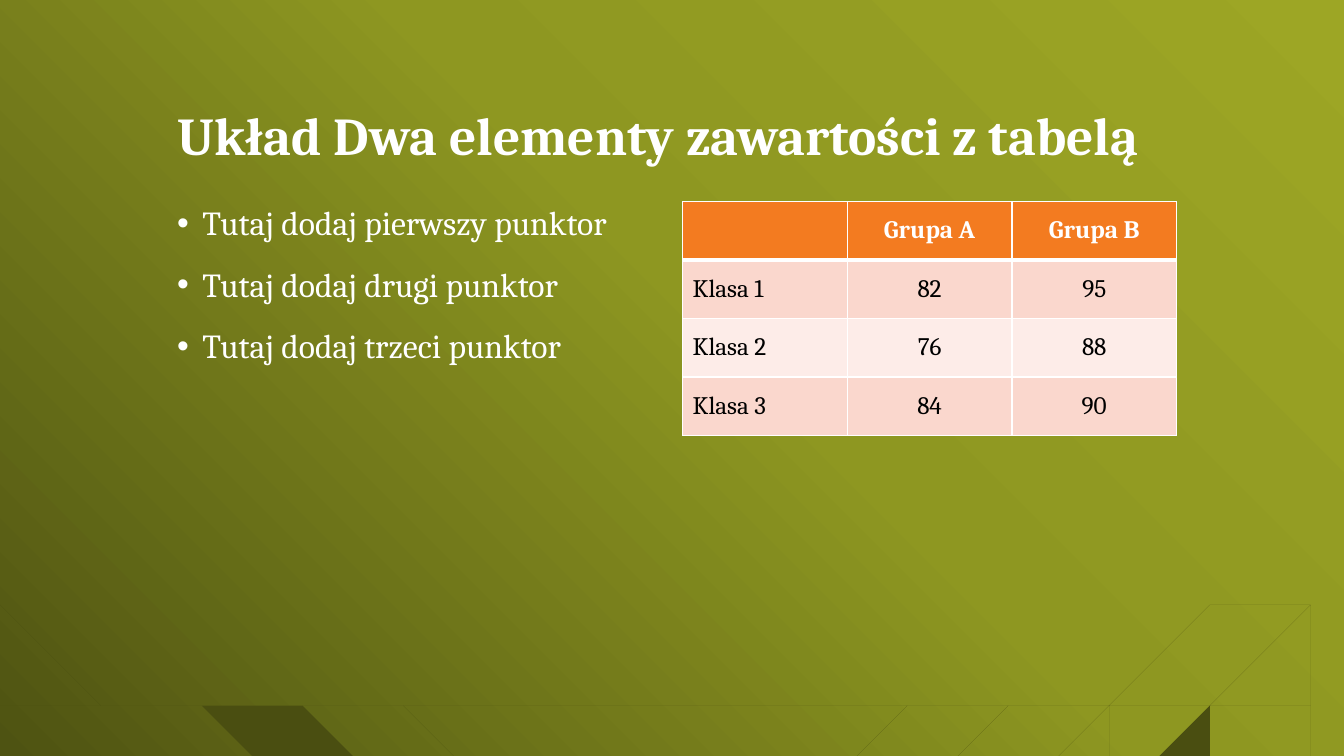
from copy import deepcopy
from lxml.etree import SubElement
from pptx import Presentation
from pptx.dml.color import RGBColor
from pptx.enum.text import MSO_ANCHOR, PP_ALIGN
from pptx.oxml import parse_xml
from pptx.oxml.ns import nsdecls, qn
from pptx.util import Inches, Pt

TITLE = "Układ Dwa elementy zawartości z tabelą"
POINTS = ["Tutaj dodaj pierwszy punktor", "Tutaj dodaj drugi punktor",
          "Tutaj dodaj trzeci punktor"]
ROWS = [["", "Grupa A", "Grupa B"],
        ["Klasa 1", "82", "95"],
        ["Klasa 2", "76", "88"],
        ["Klasa 3", "84", "90"]]

WHITE = RGBColor(0xFF, 0xFF, 0xFF)
BLACK = RGBColor(0, 0, 0)
OLIVE = RGBColor(0x4A, 0x4E, 0x11)
ORANGE = RGBColor(0xF3, 0x7B, 0x20)
BANDS = [RGBColor(0xFD, 0xEC, 0xE8), RGBColor(0xFA, 0xD7, 0xCD)]
GLOW = [(0, RGBColor(0x9D, 0xA6, 0x25)), (0.45, RGBColor(0x8E, 0x97, 0x21)),
        (1, RGBColor(0x4E, 0x53, 0x12))]
FONT = "Cambria"

WIDE, HIGH = 13.33, 7.5
LEFT, TOP, COL, GAP = 1.66, 2, 4.9, 0.21
CELL_W, CELL_H = COL / 3, 0.58

# Strands of the wave: start, two control points, end,
# then the shift of the lower edge at the start and at the end.
LONG = [
    ((2.4, 7.11), (6, 7.6), (9.8, 7.08), (WIDE, 6.04), (0.36, 0.05), (0, 0.01)),
    ((2.76, 7.16), (6.31, 7.65), (9.99, 7.13), (WIDE, 6.17), (-0.18, -0.02), (0, 0.01)),
    ((2.58, 7.14), (6.18, 7.75), (9.93, 7.27), (WIDE, 6.31), (-0.13, -0.01), (0, 0.01)),
    ((2.45, 7.13), (6.08, 7.83), (9.89, 7.38), (WIDE, 6.43), (-0.09, -0.02), (0, 0.02)),
]
# Strands that rise from the bottom edge: start, end height, widths at both.
RISE = [(7.89, 6.57, 0.19, 0.02), (9.07, 6.7, 0.16, 0.02), (10, 6.85, 0.15, 0.02),
        (10.65, 6.96, 0.19, 0.03), (11.36, 7.09, 0.18, 0.03),
        (12.03, 7.22, 0.17, 0.03), (12.65, 7.35, 0.18, 0.04)]
# Strands that sink to the bottom edge: start, end, width there.
SINK = [((2.36, 7.11), 5.09, 0.19), ((2.4, 7.15), 4.44, 0.06),
        ((2.61, 7.2), 4.18, 0.16), ((2.8, 7.27), 3.96, 0.16),
        ((2.92, 7.32), 3.74, 0.17)]
# Strands from the left edge: height there, end point.
SIDE = [(6.43, (0.88, 6.71)), (6.48, (0.98, 6.75)), (6.55, (1.06, 6.8)),
        (6.61, (1.2, 6.85)), (6.67, (1.35, 6.92)), (6.75, (1.47, 6.96))]
BODY = [(0, 6.26), (0.57, 6.53), (1.17, 6.78), (1.8, 6.98), (2.4, 7.11),
        (2.92, 7.32), (3.56, 7.5), (3.08, 7.5), (2.27, 7.25), (1.47, 6.96),
        (1, 6.77), (0.55, 6.6), (0, 6.42)]


def curve(steps, a, b, c, d):
    """Points along a cubic curve."""
    out = []
    for i in range(steps + 1):
        t = i / steps
        u = 1 - t
        out.append(tuple(u**3 * p + 3*u*u*t * q + 3*u*t*t * r + t**3 * s
                         for p, q, r, s in zip(a, b, c, d)))
    return out


def strand(steps, a, b, c, d, near, far):
    """Outline between a curve and the same curve shifted at its ends."""
    low = []
    for i, (x, y) in enumerate((a, b, c, d)):
        t = i / 3
        low.append((x + near[0] * (1 - t) + far[0] * t,
                    y + near[1] * (1 - t) + far[1] * t))
    return curve(steps, a, b, c, d) + curve(steps, *low)[::-1]


def third(a, d, sag):
    """Control points at the thirds of the chord, pushed down by sag."""
    return [(a[0] + (d[0] - a[0]) * k / 3, a[1] + (d[1] - a[1]) * k / 3 + sag)
            for k in (1, 2)]


def outlines():
    yield BODY
    for part in LONG:
        yield strand(14, *part)
    for x, y, wide, thick in RISE:
        a, d = (x, HIGH), (WIDE, y)
        sag = 0.01 * (WIDE - x) ** 2 / 2
        yield strand(5, a, *third(a, d, sag), d, (wide, 0), (0, thick))
    for a, x, wide in SINK:
        d = (x, HIGH)
        yield strand(2, a, *third(a, d, 0.02 * (x - a[0])), d, (-0.06, 0), (-wide, 0))
    for y, d in SIDE:
        a = (0, y)
        yield strand(1, a, *third(a, d, 0), d, (0, 0.01), (0, 0.01))


def write(frame, lines, size, color, bold=False, align=PP_ALIGN.LEFT,
          anchor=MSO_ANCHOR.TOP, space=None, before=None, bullet=False):
    frame.word_wrap = True
    frame.vertical_anchor = anchor
    for i, line in enumerate(lines):
        para = frame.add_paragraph() if i else frame.paragraphs[0]
        para.alignment = align
        if space:
            para.line_spacing = space
        if before:
            para.space_before = Pt(before)
        if bullet:
            props = para._p.get_or_add_pPr()
            props.set("marL", str(Inches(0.25)))
            props.set("indent", str(Inches(-0.25)))
            SubElement(props, qn("a:buFont")).set("typeface", "Arial")
            SubElement(props, qn("a:buChar")).set("char", "•")
        run = para.add_run()
        run.text = line
        font = run.font
        font.name, font.size, font.bold = FONT, Pt(size), bold
        font.color.rgb = color


def edge(cell, widths):
    """Draw white cell borders, in points: left, right, top, bottom."""
    props = cell._tc.get_or_add_tcPr()
    for i, (side, width) in enumerate(zip("LRTB", widths)):
        props.insert(i, parse_xml(
            f'<a:ln{side} {nsdecls("a")} w="{Pt(width)}"><a:solidFill>'
            f'<a:srgbClr val="{WHITE}"/></a:solidFill></a:ln{side}>'))


def paint(slide):
    fill = slide.background.fill
    fill.gradient()
    fill.gradient_angle = 225
    stops = next(slide.element.iter(qn("a:gsLst")))
    stops.append(deepcopy(stops[-1]))
    for stop, (place, color) in zip(fill.gradient_stops, GLOW):
        stop.position = place
        stop.color.rgb = color


def wave(slide):
    pen = None
    for first, *rest in outlines():
        if pen is None:
            pen = slide.shapes.build_freeform(*first, scale=Inches(1))
        else:
            pen.move_to(*first)
        pen.add_line_segments([(x, min(y, HIGH)) for x, y in rest], close=True)
    shape = pen.convert_to_shape()
    shape.shadow.inherit = False
    shape.fill.solid()
    shape.fill.fore_color.rgb = OLIVE
    shape.line.fill.background()


def box(slide, *place):
    return slide.shapes.add_textbox(*map(Inches, place)).text_frame


def grid(slide):
    place = (LEFT + COL + GAP, TOP, COL, CELL_H * len(ROWS))
    table = slide.shapes.add_table(len(ROWS), len(ROWS[0]), *map(Inches, place)).table
    for col in table.columns:
        col.width = Inches(CELL_W)
    for r, row in enumerate(ROWS):
        table.rows[r].height = Inches(CELL_H)
        for c, text in enumerate(row):
            cell = table.cell(r, c)
            cell.fill.solid()
            cell.fill.fore_color.rgb = BANDS[r % 2] if r else ORANGE
            cell.vertical_anchor = MSO_ANCHOR.MIDDLE
            edge(cell, (1, 1, 3 if r == 1 else 1, 1 if r else 3))
            if text:
                write(cell.text_frame, [text], 18, BLACK if r else WHITE, bold=not r,
                      align=PP_ALIGN.CENTER if c else PP_ALIGN.LEFT,
                      anchor=MSO_ANCHOR.MIDDLE)


def main():
    deck = Presentation()
    deck.slide_width, deck.slide_height = Inches(WIDE), Inches(HIGH)
    slide = deck.slides.add_slide(deck.slide_layouts[6])
    paint(slide)
    wave(slide)
    write(box(slide, LEFT, 0.44, 10, 1.27), [TITLE], 38, WHITE, bold=True,
          anchor=MSO_ANCHOR.BOTTOM, space=0.9)
    write(box(slide, LEFT, TOP, COL, 4.58), POINTS, 24, WHITE,
          space=0.9, before=18, bullet=True)
    grid(slide)
    deck.save("out.pptx")


if __name__ == "__main__":
    main()
